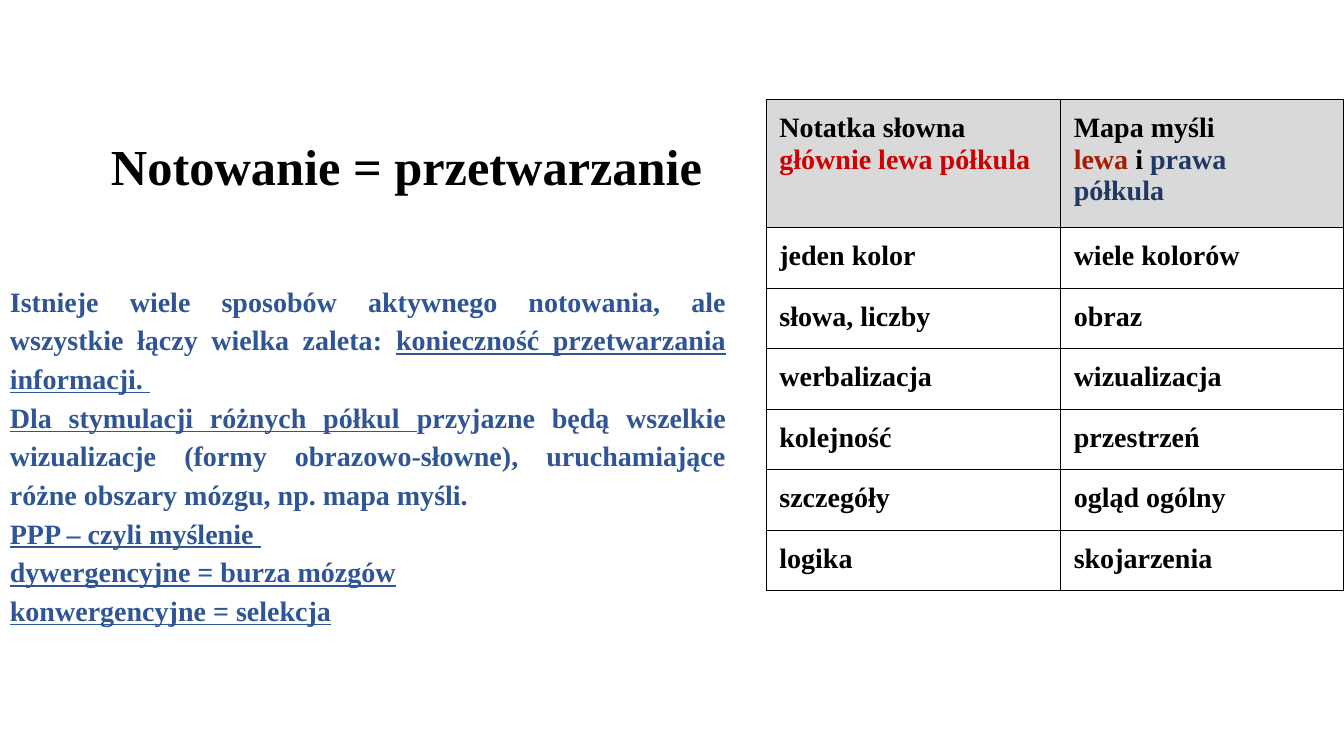
from lxml import etree
from pptx import Presentation
from pptx import util as u
from pptx.dml.color import RGBColor
from pptx.enum import text
from pptx.oxml import ns

FONT = "Times New Roman"
COLORS = {
    "black": "000000",
    "blue": "2F5597",
    "navy": "203864",
    "red": "CC0000",
    "brick": "A61C00",
    "header": "D9D9D9",
}
BODY = [
    [("Istnieje wiele sposobów aktywnego notowania, ale wszystkie łączy wielka zaleta: ", False),
     ("konieczność przetwarzania informacji. ", True)],
    [("Dla stymulacji różnych półkul ", True),
     ("przyjazne będą wszelkie wizualizacje (formy obrazowo-słowne), "
      "uruchamiające różne obszary mózgu, np. mapa myśli. ", False)],
    [("PPP – czyli myślenie ", True)],
    [("dywergencyjne = burza mózgów", True)],
    [("konwergencyjne = selekcja", True)],
]
HEADERS = [
    [[("Notatka słowna", "black")], [("głównie lewa półkula", "red")]],
    [[("Mapa myśli", "black")],
     [("lewa ", "brick"), ("i ", "black"), ("prawa", "navy")],
     [("półkula", "navy")]],
]
PAIRS = [
    ("jeden kolor", "wiele kolorów"),
    ("słowa, liczby", "obraz"),
    ("werbalizacja", "wizualizacja"),
    ("kolejność", "przestrzeń"),
    ("szczegóły", "ogląd ogólny"),
    ("logika", "skojarzenia"),
]


def rgb(name):
    """Return the palette colour with this name."""
    return RGBColor.from_string(COLORS[name])


def add_run(p, words, color, size=20, underline=False):
    """Add one bold run to a paragraph."""
    r = p.add_run()
    r.text = words
    r.font.name = FONT
    r.font.size = u.Pt(size)
    r.font.bold = True
    r.font.underline = underline
    r.font.color.rgb = rgb(color)


def paragraphs(tf, items):
    """Yield a paragraph of the frame with each item."""
    for i, item in enumerate(items):
        yield (tf.add_paragraph() if i else tf.paragraphs[0]), item


def set_margins(target, inches):
    """Give a text frame or table cell equal margins."""
    for side in ("left", "top", "right", "bottom"):
        setattr(target, f"margin_{side}", u.Inches(inches))


def add_title(s):
    """Place and fill the title placeholder."""
    sp = s.shapes.title
    sp.left, sp.top = u.Inches(1), u.Inches(1.25)
    sp.width, sp.height = u.Inches(10.83), u.Inches(0.79)
    tf = sp.text_frame
    tf.auto_size = text.MSO_AUTO_SIZE.NONE
    tf.vertical_anchor = text.MSO_ANCHOR.BOTTOM
    set_margins(tf, 0.1)
    p = tf.paragraphs[0]
    p.alignment = text.PP_ALIGN.LEFT
    add_run(p, "Notowanie = przetwarzanie", "black", size=36)


def add_body(s):
    """Add the justified text on the left."""
    sp = s.shapes.add_textbox(u.Inches(0), u.Inches(2.67), u.Inches(7.3), u.Inches(3.63))
    tf = sp.text_frame
    tf.word_wrap = True
    set_margins(tf, 0.1)
    for p, runs in paragraphs(tf, BODY):
        p.alignment = text.PP_ALIGN.JUSTIFY
        p.line_spacing = 1.15
        for words, underline in runs:
            add_run(p, words, "blue", underline=underline)


def add_borders(cell):
    """Draw a thin black line on each side of a cell."""
    tcPr = cell._tc.get_or_add_tcPr()
    for side in ("lnL", "lnR", "lnT", "lnB"):
        ln = etree.SubElement(tcPr, ns.qn(f"a:{side}"), w=str(u.Pt(0.75)))
        fill = etree.SubElement(ln, ns.qn("a:solidFill"))
        etree.SubElement(fill, ns.qn("a:srgbClr"), val=COLORS["black"])


def fill_cell(cell, lines, header):
    """Write the lines of a cell and set its look."""
    set_margins(cell, 0.13)
    add_borders(cell)
    if header:
        cell.fill.solid()
        cell.fill.fore_color.rgb = rgb("header")
    else:
        cell.fill.background()
    for p, runs in paragraphs(cell.text_frame, lines):
        for words, color in runs:
            add_run(p, words, color)


def add_comparison(s):
    """Add the table comparing notes with mind maps."""
    rows = [HEADERS] + [[[[(words, "black")]] for words in pair] for pair in PAIRS]
    frame = s.shapes.add_table(len(rows), 2, u.Inches(7.6), u.Inches(0.99),
                               u.Inches(5.72), u.Inches(4.87))
    table = frame.table
    for column, width in zip(table.columns, (2.92, 2.8)):
        column.width = u.Inches(width)
    for i, cells in enumerate(rows):
        table.rows[i].height = u.Inches(0.6 if i else 1.27)
        for j, lines in enumerate(cells):
            fill_cell(table.cell(i, j), lines, header=i == 0)


def main():
    """Build and save the slide."""
    prs = Presentation()
    prs.slide_width, prs.slide_height = u.Inches(13.33), u.Inches(7.5)
    s = prs.slides.add_slide(prs.slide_layouts[5])
    add_title(s)
    add_body(s)
    add_comparison(s)
    prs.save("out.pptx")


if __name__ == "__main__":
    main()
